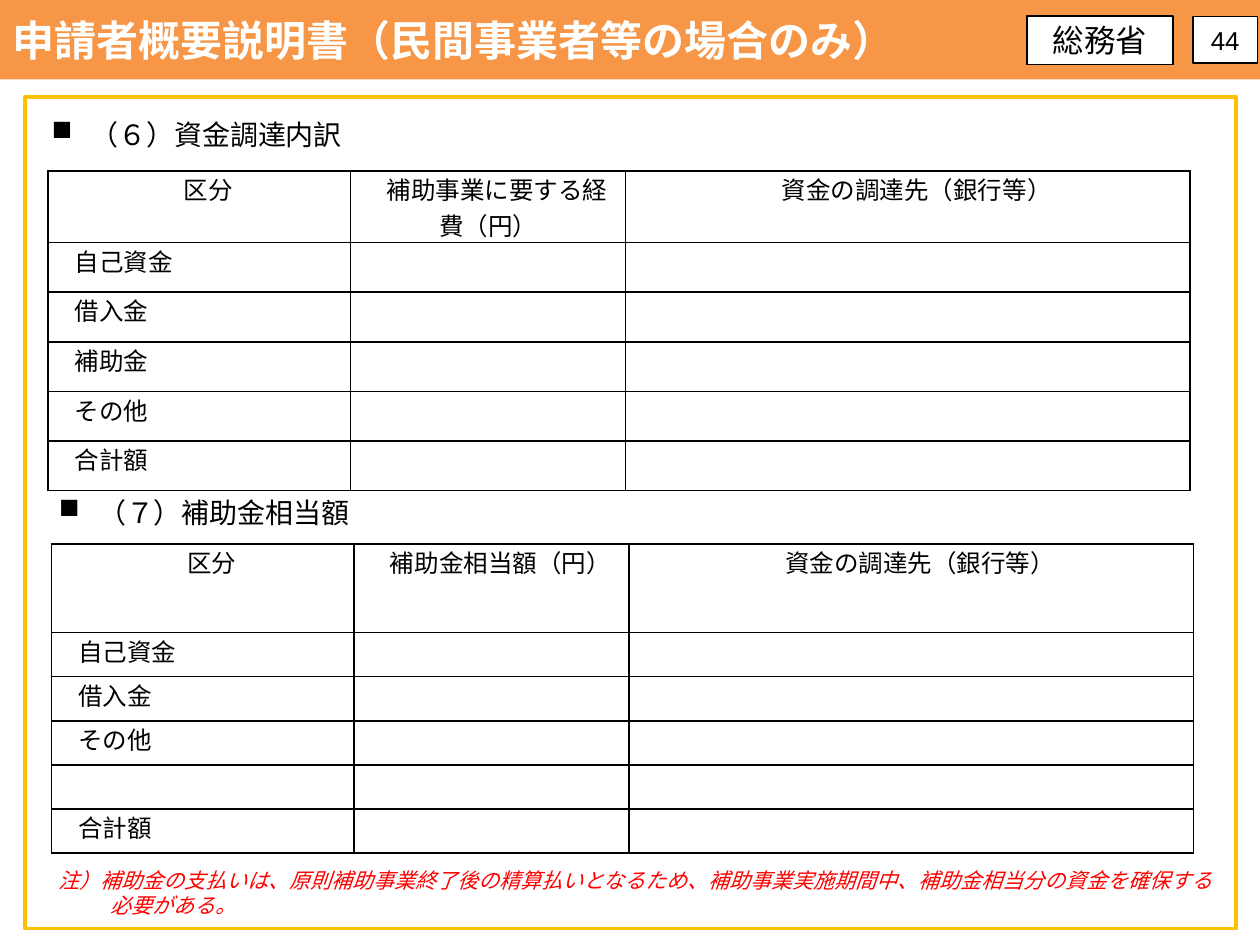
import pptx
import pptx.dml.color
import pptx.enum.shapes
import pptx.enum.text
import pptx.oxml
import pptx.oxml.ns
import pptx.util

Cm, Pt = pptx.util.Cm, pptx.util.Pt
ALIGN, ANCHOR = pptx.enum.text.PP_ALIGN, pptx.enum.text.MSO_ANCHOR
CJK = "Noto Sans CJK JP"
A = pptx.oxml.ns.nsdecls("a")

TITLE = "申請者概要説明書（民間事業者等の場合のみ）"
SOURCE = "資金の調達先（銀行等）"
BOXES = [
    ("総務省", (20.7, 0.33, 2.95, 0.97), 1, 18),
    ("44", (24.05, 0.33, 1.3, 0.94), 0.75, 14.8),
]
FRAME = (0.51, 1.96, 24.41, 16.76)
HEADINGS = [
    ("（６）資金調達内訳", (0.79, 2.24, 23.52, 0.94)),
    ("（７）補助金相当額", (0.94, 9.86, 23.52, 0.94)),
]
TABLES = [
    {"at": (0.97, 3.45), "heights": (1.19, 1.0),
     "head": ("区分", "補助事業に要する経費（円）", SOURCE),
     "labels": ("自己資金", "借入金", "補助金", "その他", "合計額")},
    {"at": (1.04, 10.97), "heights": (1.78, 0.89),
     "head": ("区分", "補助金相当額（円）", SOURCE),
     "labels": ("自己資金", "借入金", "その他", "", "合計額")},
]
COLUMNS = (6.1, 5.54, 11.38)
NOTE = "注）補助金の支払いは、原則補助事業終了後の精算払いとなるため、補助事業実施期間中、補助金相当分の資金を確保する必要がある。"
NOTE_AT = (0.94, 17.37, 23.95, 1.27)


def rgb(value):
    """Turn a hex string into a colour."""
    return pptx.dml.color.RGBColor.from_string(value)


def write(tf, text, size, name=CJK, color="000000", align=ALIGN.LEFT,
          left=0, indent=0, bullet=None, **fmt):
    """Put one formatted paragraph into a text frame."""
    p = tf.paragraphs[0]
    p.alignment = align
    props = p._p.get_or_add_pPr()
    props.set("marL", str(Cm(left)))
    props.set("indent", str(Cm(indent)))
    if bullet:
        props.append(pptx.oxml.parse_xml(f'<a:buChar {A} char="{bullet}"/>'))
    if not text:
        p.font.size = Pt(size)
        return
    r = p.add_run()
    r.text = text
    for key, value in {"size": Pt(size), "name": name, **fmt}.items():
        setattr(r.font, key, value)
    r.font.color.rgb = rgb(color)
    r._r.rPr.find(pptx.oxml.ns.qn("a:latin")).addnext(
        pptx.oxml.parse_xml(f'<a:ea {A} typeface="{name}"/>'))


def add_box(s, at, width, color, fill=None):
    """Add an outlined rectangle."""
    sp = s.shapes.add_shape(pptx.enum.shapes.MSO_SHAPE.RECTANGLE, *map(Cm, at))
    sp.shadow.inherit = False
    if fill:
        sp.fill.solid()
        sp.fill.fore_color.rgb = rgb(fill)
    else:
        sp.fill.background()
    sp.line.color.rgb = rgb(color)
    sp.line.width = Pt(width)
    return sp


def add_text(s, at, text, size, **fmt):
    """Add a wrapping text box."""
    tf = s.shapes.add_textbox(*map(Cm, at)).text_frame
    tf.word_wrap = True
    write(tf, text, size, **fmt)


def format_cell(cell, text, align):
    """Fill in a table cell and draw its borders."""
    margins = {"margin_left": 0.18, "margin_right": 0.18,
               "margin_top": 0, "margin_bottom": 0}
    for key, value in margins.items():
        setattr(cell, key, Cm(value))
    cell.fill.background()
    for i, side in enumerate("LRTB"):
        cell._tc.tcPr.insert(i, pptx.oxml.parse_xml(
            f'<a:ln{side} {A} w="{Pt(1)}"><a:solidFill>'
            f'<a:srgbClr val="000000"/></a:solidFill></a:ln{side}>'))
    write(cell.text_frame, text, 14, align=align, indent=0.36)


def add_grid(s, at, heights, head, labels):
    """Add a table with a header row and labelled blank rows."""
    rows = [head] + [(label, "", "") for label in labels]
    sizes = [heights[0]] + [heights[1]] * len(labels)
    table = s.shapes.add_table(len(rows), len(COLUMNS), *map(
        Cm, (*at, sum(COLUMNS), sum(sizes)))).table
    table.first_row = table.horz_banding = False
    for column, width in zip(table.columns, COLUMNS):
        column.width = Cm(width)
    for i, (row, height) in enumerate(zip(rows, sizes)):
        table.rows[i].height = Cm(height)
        for j, text in enumerate(row):
            format_cell(table.cell(i, j), text, ALIGN.LEFT if i else ALIGN.CENTER)


def main():
    """Build the slide and save it."""
    prs = pptx.Presentation()
    prs.slide_width, prs.slide_height = Cm(25.4), Cm(19.05)
    s = prs.slides.add_slide(prs.slide_layouts[5])

    title = s.shapes.title
    place = {"left": 0, "top": 0, "width": 25.4, "height": 1.6}
    for key, value in place.items():
        setattr(title, key, Cm(value))
    title.fill.solid()
    title.fill.fore_color.rgb = rgb("F79646")
    title.text_frame.auto_size = pptx.enum.text.MSO_AUTO_SIZE.NONE
    title.text_frame.vertical_anchor = ANCHOR.MIDDLE
    write(title.text_frame, TITLE, 24, color="FFFFFF", bold=True)

    add_box(s, FRAME, 2.25, "FFC000")
    for text, at, width, size in BOXES:
        tf = add_box(s, at, width, "000000", "FFFFFF").text_frame
        tf.vertical_anchor = ANCHOR.MIDDLE
        write(tf, text, size, name="Arial", align=ALIGN.CENTER)
    for table in TABLES:
        add_grid(s, **table)
    for text, at in HEADINGS:
        add_text(s, at, text, 16, name="Roboto", left=0.79, indent=-0.79, bullet="■")
    add_text(s, NOTE_AT, NOTE, 12, color="FF0000", left=1.04, indent=-1.04, italic=True)

    prs.save("out.pptx")


if __name__ == "__main__":
    main()
